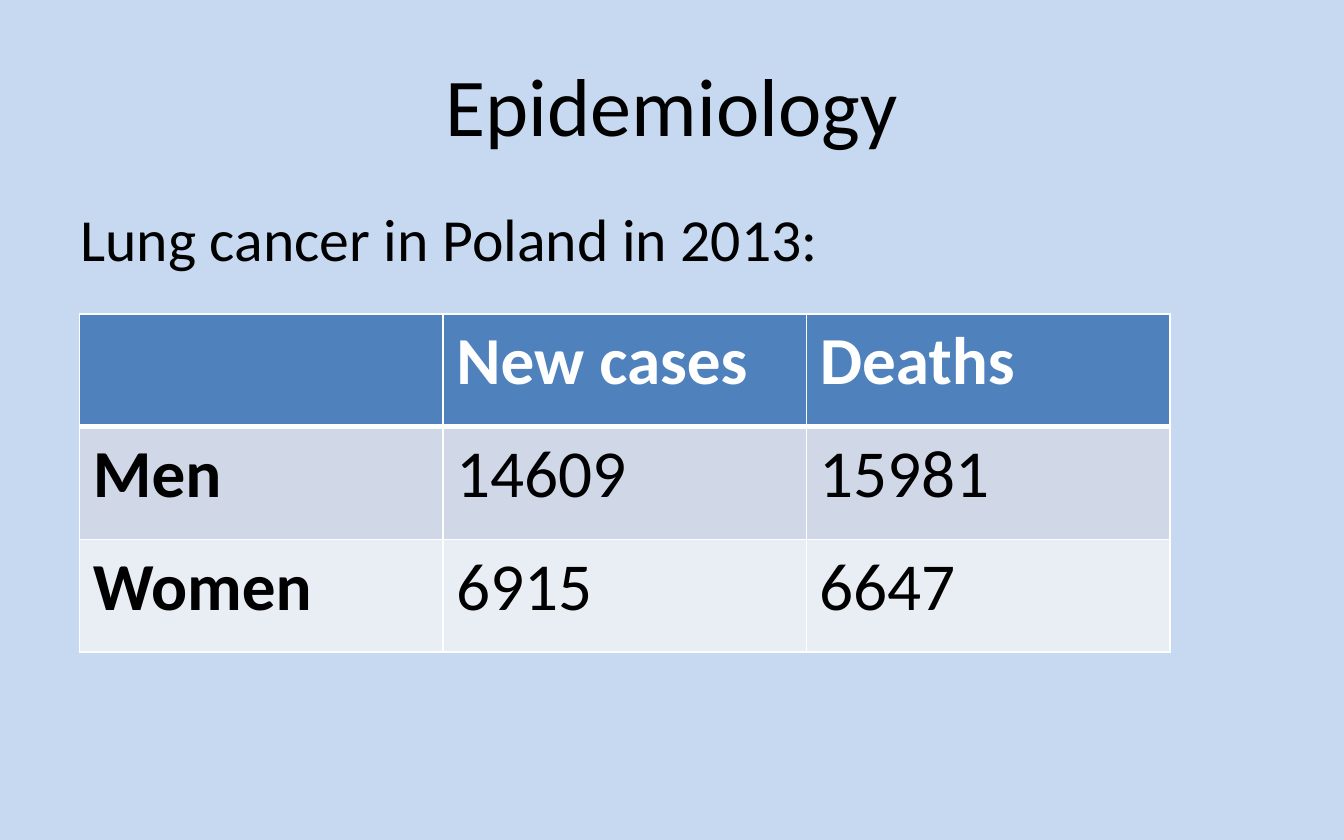
from lxml import etree
from pptx import Presentation
from pptx.dml.color import RGBColor
from pptx.enum.text import MSO_ANCHOR, PP_ALIGN
from pptx.oxml.ns import qn
from pptx.util import Cm, Pt

CENTER, LEFT = PP_ALIGN.CENTER, PP_ALIGN.LEFT
MIDDLE, TOP = MSO_ANCHOR.MIDDLE, MSO_ANCHOR.TOP

TITLE = "Epidemiology"
INTRO = "Lung cancer in Poland in 2013:"
ROWS = [
    ("", "New cases", "Deaths"),
    ("Men", "14609", "15981"),
    ("Women", "6915", "6647"),
]
COLORS = {
    "background": "C6D9F1",
    "text": "000000",
    "border": "FFFFFF",
    "header text": "FFFFFF",
    "header": "4F81BD",
    "odd row": "D0D8E8",
    "even row": "E9EDF4",
}
ROW_FILLS = ("header", "odd row", "even row")
FONT = "Calibri"
COLUMN_WIDTH, ROW_HEIGHT = Cm(6.87), Cm(2.13)
THIN, THICK = Pt(1), Pt(3)


def color(name):
    return RGBColor.from_string(COLORS[name])


def write_text(frame, text, size, color_name="text", bold=False, align=LEFT):
    para = frame.paragraphs[0]
    para.alignment = align
    span = para.add_run()
    span.text = text
    span.font.name = FONT
    span.font.size = Pt(size)
    span.font.bold = bold
    span.font.color.rgb = color(color_name)


def add_text_box(page, text, left, top, width, height, anchor=TOP, **text_format):
    box = page.shapes.add_textbox(Cm(left), Cm(top), Cm(width), Cm(height))
    box.text_frame.word_wrap = True
    box.text_frame.vertical_anchor = anchor
    write_text(box.text_frame, text, **text_format)


def add_borders(cell, widths):
    """Draw the cell's sides; widths maps L, R, T, B to line widths."""
    properties = cell._tc.get_or_add_tcPr()
    for side, width in widths.items():
        line = etree.SubElement(properties, qn(f"a:ln{side}"), w=str(width))
        fill = etree.SubElement(line, qn("a:solidFill"))
        etree.SubElement(fill, qn("a:srgbClr"), val=COLORS["border"])


def add_case_table(page, left, top):
    row_count, column_count = len(ROWS), len(ROWS[0])
    table = page.shapes.add_table(
        row_count, column_count, Cm(left), Cm(top),
        COLUMN_WIDTH * column_count, ROW_HEIGHT * row_count,
    ).table
    for column in table.columns:
        column.width = COLUMN_WIDTH
    for row_index, values in enumerate(ROWS):
        table.rows[row_index].height = ROW_HEIGHT
        is_header = row_index == 0
        for column_index, value in enumerate(values):
            cell = table.cell(row_index, column_index)
            add_borders(cell, {
                "L": THIN,
                "R": THIN,
                "T": THICK if row_index == 1 else THIN,
                "B": THICK if is_header else THIN,
            })
            cell.fill.solid()
            cell.fill.fore_color.rgb = color(ROW_FILLS[row_index])
            if value:
                write_text(
                    cell.text_frame, value, size=36,
                    color_name="header text" if is_header else "text",
                    bold=is_header or column_index == 0,
                )


def main():
    deck = Presentation()
    deck.slide_width, deck.slide_height = Cm(25.4), Cm(15.88)
    page = deck.slides.add_slide(deck.slide_layouts[6])
    page.background.fill.solid()
    page.background.fill.fore_color.rgb = color("background")

    add_text_box(page, TITLE, 1.27, 0.64, 22.86, 2.64,
                 anchor=MIDDLE, size=44, align=CENTER)
    add_text_box(page, INTRO, 1.27, 3.7, 22.86, 10.47, size=32)
    add_case_table(page, 1.5, 5.94)
    deck.save("out.pptx")


if __name__ == "__main__":
    main()
